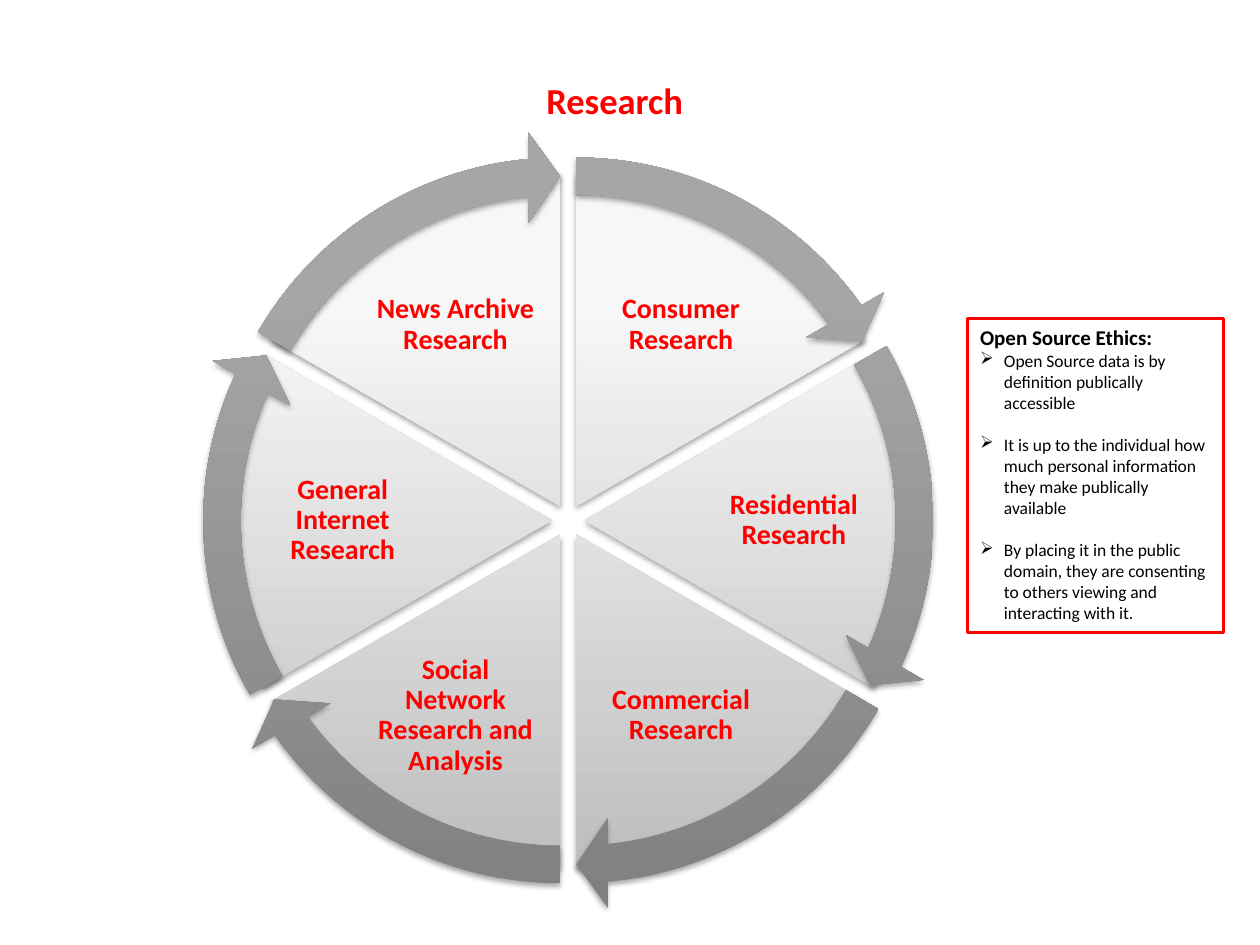
from math import cos, radians, sin

from lxml.etree import SubElement
from pptx import Presentation
from pptx.dml.color import RGBColor
from pptx.enum.shapes import MSO_SHAPE as Shape
from pptx.enum.text import MSO_ANCHOR as Anchor, PP_ALIGN as Align
from pptx.oxml import parse_xml
from pptx.oxml.ns import nsdecls, qn
from pptx.util import Inches, Pt

# Content
TITLE = "Research"
TOPICS = [  # clockwise from the top
    "Consumer Research",
    "Residential Research",
    "Commercial Research",
    "Social Network Research and Analysis",
    "General Internet Research",
    "News Archive Research",
]
ETHICS = "Open Source Ethics:"
RULES = [
    "Open Source data is by definition publically accessible",
    "It is up to the individual how much personal information they make publically available",
    "By placing it in the public domain, they are consenting to others viewing and interacting with it.",
]

# Style
FONT = "Calibri"
RED = RGBColor(0xFF, 0, 0)
BLACK = RGBColor(0, 0, 0)
WHITE = RGBColor(0xFF, 0xFF, 0xFF)
LIGHT = [(0, "BEBEBE"), (80, "F7F7F7"), (100, "F8F8F8")]
DARK = [(0, "808080"), (80, "A6A6A6"), (100, "A7A7A7")]

# Wheel geometry: inches, and degrees clockwise from the right
MID_X, MID_Y = 4.51, 4.13
GAP = 0.13          # how far each slice is pushed outward
REACH = 1.79        # distance from the middle to a label
PIE, RING = 5.29, 5.95
STEP = 360 / len(TOPICS)
HEAD = 5.46         # angle taken by an arrowhead
TURN = 0.6          # adjustment units per degree


def style(run, size, color, bold=False):
    font = run.font
    font.name, font.size, font.bold = FONT, Pt(size), bold
    font.color.rgb = color


def polar(dist, angle):
    a = radians(angle)
    return MID_X + dist * cos(a), MID_Y + dist * sin(a)


def place(x, y, w, h):
    """Box of the given size centred on x, y."""
    return [Inches(v) for v in (x - w / 2, y - h / 2, w, h)]


def shade(shape, stops):
    """Vertical gradient and soft shadow, without an outline."""
    shape.line.fill.background()
    marks = "".join(
        f'<a:gs pos="{pos * 1000}"><a:srgbClr val="{color}"/></a:gs>'
        for pos, color in stops)
    props = shape._element.spPr
    props.find(qn("a:prstGeom")).addnext(parse_xml(
        f'<a:gradFill {nsdecls("a")} rotWithShape="1"><a:gsLst>{marks}</a:gsLst>'
        '<a:lin ang="16200000" scaled="0"/></a:gradFill>'))
    props.append(parse_xml(
        f'<a:effectLst {nsdecls("a")}><a:outerShdw blurRad="40000" dist="23000" '
        'dir="5400000" rotWithShape="0"><a:srgbClr val="000000">'
        '<a:alpha val="35000"/></a:srgbClr></a:outerShdw></a:effectLst>'))


def add_slice(shapes, kind, index, size, adjust, stops):
    x, y = polar(GAP, (index - 1) * STEP)
    part = shapes.add_shape(kind, *place(x, y, size, size))
    for i, value in enumerate(adjust):
        part.adjustments[i] = value
    shade(part, stops)


def add_label(shapes, index, words):
    angle = (index - 1) * STEP
    w, h = (1.45, 1.04) if index % 3 == 1 else (1.39, 1.07)
    frame = shapes.add_textbox(*place(*polar(REACH, angle), w, h)).text_frame
    frame.word_wrap = True
    frame.vertical_anchor = Anchor.MIDDLE
    frame.margin_left = frame.margin_right = Inches(0.02)
    frame.margin_top = frame.margin_bottom = Inches(0.02)
    frame.text = words
    para = frame.paragraphs[0]
    para.alignment, para.line_spacing = Align.CENTER, 0.9
    style(para.runs[0], 16, RED, True)


deck = Presentation()
deck.slide_width, deck.slide_height = Inches(10), Inches(7.5)
slide = deck.slides.add_slide(deck.slide_layouts[6])

# Title, lowered and set a little left of its box's middle
box = slide.shapes.add_shape(
    Shape.RECTANGLE, Inches(0.43), Inches(0.01), Inches(9.17), Inches(1.41))
box.shadow.inherit = False
box.fill.solid()
box.fill.fore_color.rgb = WHITE
box.line.fill.background()
frame = box.text_frame
frame.vertical_anchor = Anchor.TOP
frame.margin_top, frame.margin_right = Inches(0.27), Inches(0.37)
frame.text = TITLE
para = frame.paragraphs[0]
para.alignment = Align.CENTER
style(para.runs[0], 36.1, RED, True)
para.runs[0].font._element.set("baseline", "-25000")

# Wheel: slices with labels, then the arrows around them
wheel = slide.shapes.add_group_shape().shapes
starts = [(270 + i * STEP) % 360 for i in range(len(TOPICS))]
ends = [(start + STEP) % 360 for start in starts]
for i, words in enumerate(TOPICS):
    add_slice(wheel, Shape.PIE, i, PIE, (starts[i] * TURN, ends[i] * TURN), LIGHT)
    add_label(wheel, i, words)
for i in range(len(TOPICS)):
    bend = (0.05, HEAD * TURN, (ends[i] - HEAD) * TURN, starts[i] * TURN, 0.06)
    add_slice(wheel, Shape.CIRCULAR_ARROW, i, RING, bend, DARK)

# Ethics box
note = slide.shapes.add_textbox(
    Inches(7.68), Inches(2.53), Inches(2.03), Inches(2.49))
note.line.color.rgb = RED
note.line.width = Pt(1.5)
frame = note.text_frame
frame.word_wrap = True
frame.text = ETHICS
style(frame.paragraphs[0].runs[0], 12, BLACK, True)
for i, words in enumerate(RULES):
    para = frame.add_paragraph()
    para.text = words
    if i:
        para.space_before = Pt(12)
    props = para._p.get_or_add_pPr()
    props.set("marL", str(Inches(0.19)))
    props.set("indent", str(-Inches(0.19)))
    SubElement(props, qn("a:buChar")).set("char", "➢")
    style(para.runs[0], 10, BLACK)

deck.save("out.pptx")
